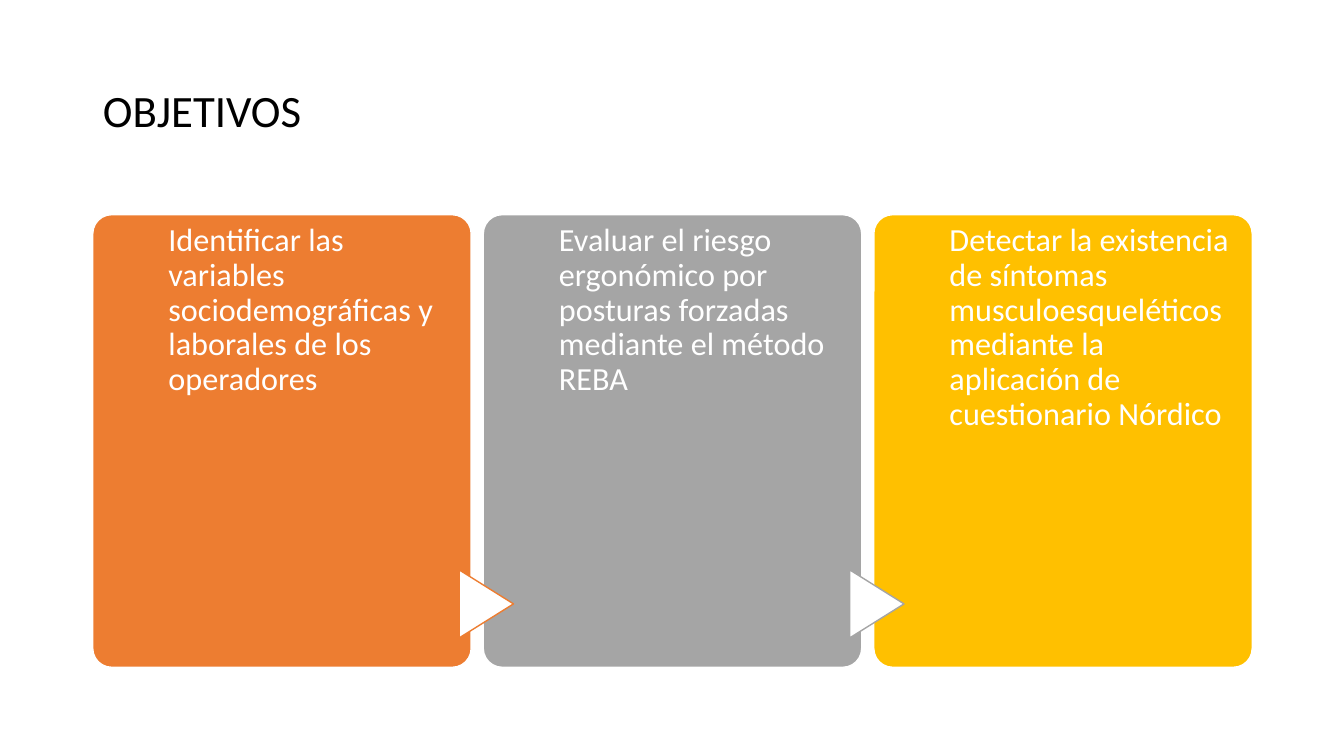
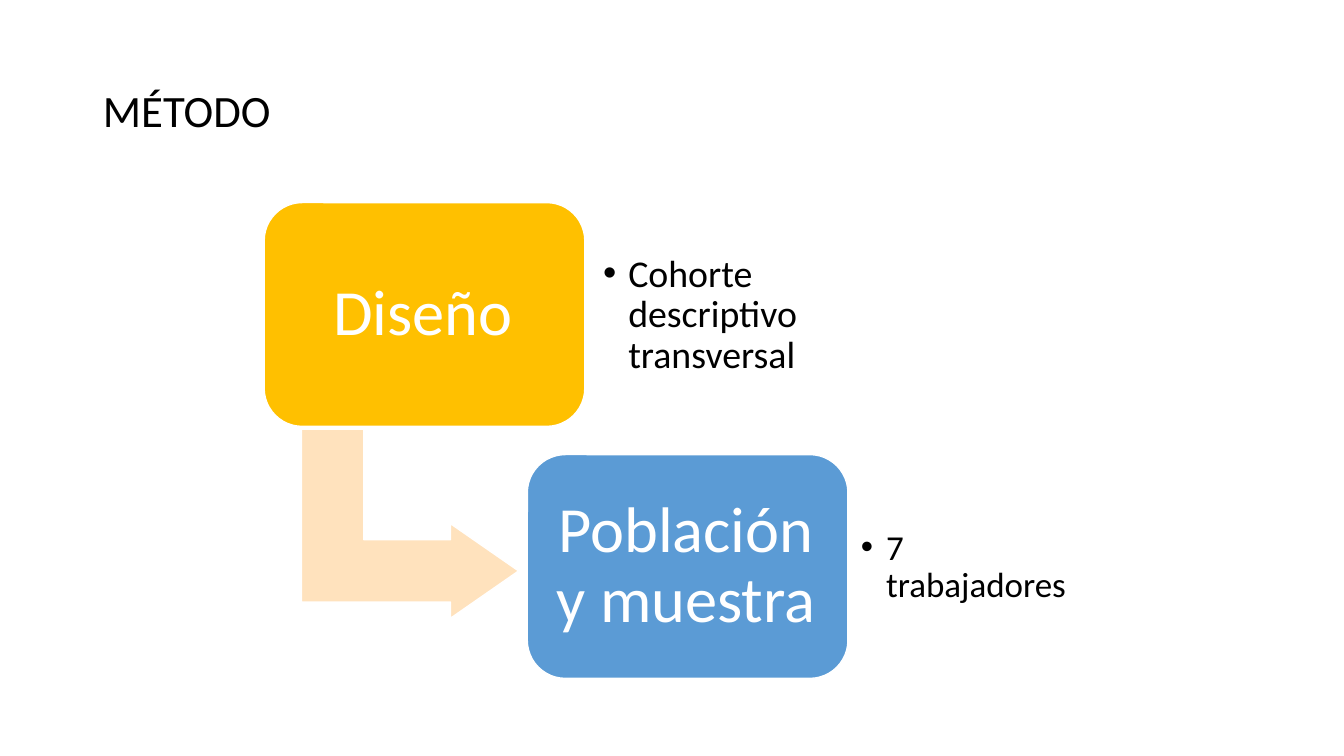
from lxml import etree
from pptx import Presentation
from pptx.dml.color import RGBColor
from pptx.enum.shapes import MSO_SHAPE
from pptx.enum.text import MSO_ANCHOR, MSO_AUTO_SIZE, PP_ALIGN
from pptx.oxml.ns import qn
from pptx.util import Inches, Pt

ROUNDED = MSO_SHAPE.ROUNDED_RECTANGLE
TRIANGLE = MSO_SHAPE.FLOWCHART_EXTRACT
BENT_ARROW = MSO_SHAPE.BENT_UP_ARROW
TOP, MIDDLE = MSO_ANCHOR.TOP, MSO_ANCHOR.MIDDLE
LEFT, CENTER = PP_ALIGN.LEFT, PP_ALIGN.CENTER
NO_AUTOFIT = MSO_AUTO_SIZE.NONE

FONT = "Calibri"
WHITE, BLACK = "FFFFFF", "000000"
ORANGE, GRAY, GOLD, BLUE, PEACH = "ED7D31", "A5A5A5", "FFC000", "5B9BD5", "FFE2BD"

SLIDE_WIDTH, SLIDE_HEIGHT = 13.33, 7.5
TITLE_BOX = (0.92, 0.4, 11.5, 1.45)
CARDS_BOX = (0.92, 2.13, 11.5, 4.49)
CARD_GAP = 0.12
FIRST_STEP_BOX = (2.62, 2.01, 3.18, 2.22)
STEP_RIGHT, STEP_DOWN = 2.61, 2.5
BULLET_INDENT = 0.25

OBJECTIVES = [
    (ORANGE, "Identificar las variables sociodemográficas y laborales de los operadores"),
    (GRAY, "Evaluar el riesgo ergonómico por posturas forzadas mediante el método REBA"),
    (GOLD, "Detectar la existencia de síntomas musculoesqueléticos mediante la "
           "aplicación de cuestionario Nórdico"),
]
STEPS = [
    (GOLD, "Diseño", "Cohorte descriptivo transversal", 27, 0.15, (1.01, 0.1, 0.7, 0.81)),
    (BLUE, "Población y muestra", "7 trabajadores", 25, 0.13, (1, 0.1, 0.73, 0.81)),
]


def color(hex_string):
    return RGBColor.from_string(hex_string)


def within(box, shares):
    left, top, width, height = box
    return (left + shares[0] * width, top + shares[1] * height,
            shares[2] * width, shares[3] * height)


def add_shape(slide, kind, box, fill, line=WHITE, adjustments=(), rotation=0):
    shape = slide.shapes.add_shape(kind, *map(Inches, box))
    shape.shadow.inherit = False
    shape.fill.solid()
    shape.fill.fore_color.rgb = color(fill)
    shape.line.color.rgb = color(line)
    shape.line.width = Pt(1)
    shape.rotation = rotation
    for index, value in enumerate(adjustments):
        shape.adjustments[index] = value
    return shape


def add_bullet(paragraph):
    properties = paragraph._p.get_or_add_pPr()
    properties.set("marL", str(Inches(BULLET_INDENT)))
    properties.set("indent", str(-Inches(BULLET_INDENT)))
    etree.SubElement(properties, qn("a:buFont")).set("typeface", "Arial")
    etree.SubElement(properties, qn("a:buChar")).set("char", "•")


def write(frame, text, size, font_color, anchor=MIDDLE, align=LEFT, bullet=False):
    frame.word_wrap = True
    frame.auto_size = NO_AUTOFIT
    frame.vertical_anchor = anchor
    frame.text = text
    paragraph = frame.paragraphs[0]
    if bullet:
        add_bullet(paragraph)
    paragraph.alignment = align
    paragraph.line_spacing = 0.9
    paragraph.space_before = Pt(0)
    paragraph.font.name = FONT
    paragraph.font.size = Pt(size)
    paragraph.font.color.rgb = color(font_color)


def add_text(slide, box, text, size, font_color, insets, **style):
    frame = slide.shapes.add_textbox(*map(Inches, box)).text_frame
    (frame.margin_left, frame.margin_top,
     frame.margin_right, frame.margin_bottom) = map(Inches, insets)
    write(frame, text, size, font_color, **style)


def add_titled_slide(presentation, text):
    slide = presentation.slides.add_slide(presentation.slide_layouts[5])
    title = slide.shapes.title
    title.left, title.top, title.width, title.height = map(Inches, TITLE_BOX)
    write(title.text_frame, text, 32, BLACK)
    return slide


def add_cards(slide, box, cards):
    left, top, width, height = box
    card_width = (width - CARD_GAP * (len(cards) - 1)) / len(cards)
    card_boxes = [(left + index * (card_width + CARD_GAP), top, card_width, height)
                  for index in range(len(cards))]
    for card_box, (fill, text) in zip(card_boxes, cards):
        add_shape(slide, ROUNDED, card_box, fill, adjustments=[0.05])
        add_text(slide, within(card_box, (0.2, 0, 0.75, 1)), text, 23, WHITE,
                 (0, 0.09, 0, 0), anchor=TOP)
    for card_box, (fill, _) in zip(card_boxes[:-1], cards):
        add_shape(slide, TRIANGLE, within(card_box, (0.95, 0.8, 0.18, 0.12)),
                  WHITE, line=fill, rotation=90)


def add_step(slide, box, fill, label, detail, detail_size, detail_inset, detail_shares):
    add_shape(slide, ROUNDED, box, fill, adjustments=[0.17])
    add_text(slide, within(box, (0.03, 0.05, 0.93, 0.9)), label, 46, WHITE,
             [0.19] * 4, align=CENTER)
    add_text(slide, within(box, detail_shares), detail, detail_size, BLACK,
             [detail_inset] * 4, bullet=True)


def add_staircase(slide, first_box, steps):
    left, top, width, height = first_box
    for index, step in enumerate(steps):
        step_box = (left + index * STEP_RIGHT, top + index * STEP_DOWN, width, height)
        if index < len(steps) - 1:
            add_shape(slide, BENT_ARROW, within(step_box, (0.16, 0.95, 0.59, 0.97)),
                      PEACH, adjustments=[0.33, 0.25, 0.36], rotation=90)
        add_step(slide, step_box, *step)


def main():
    presentation = Presentation()
    presentation.slide_width = Inches(SLIDE_WIDTH)
    presentation.slide_height = Inches(SLIDE_HEIGHT)
    add_cards(add_titled_slide(presentation, "OBJETIVOS"), CARDS_BOX, OBJECTIVES)
    add_staircase(add_titled_slide(presentation, "MÉTODO"), FIRST_STEP_BOX, STEPS)
    presentation.save("out.pptx")


if __name__ == "__main__":
    main()
